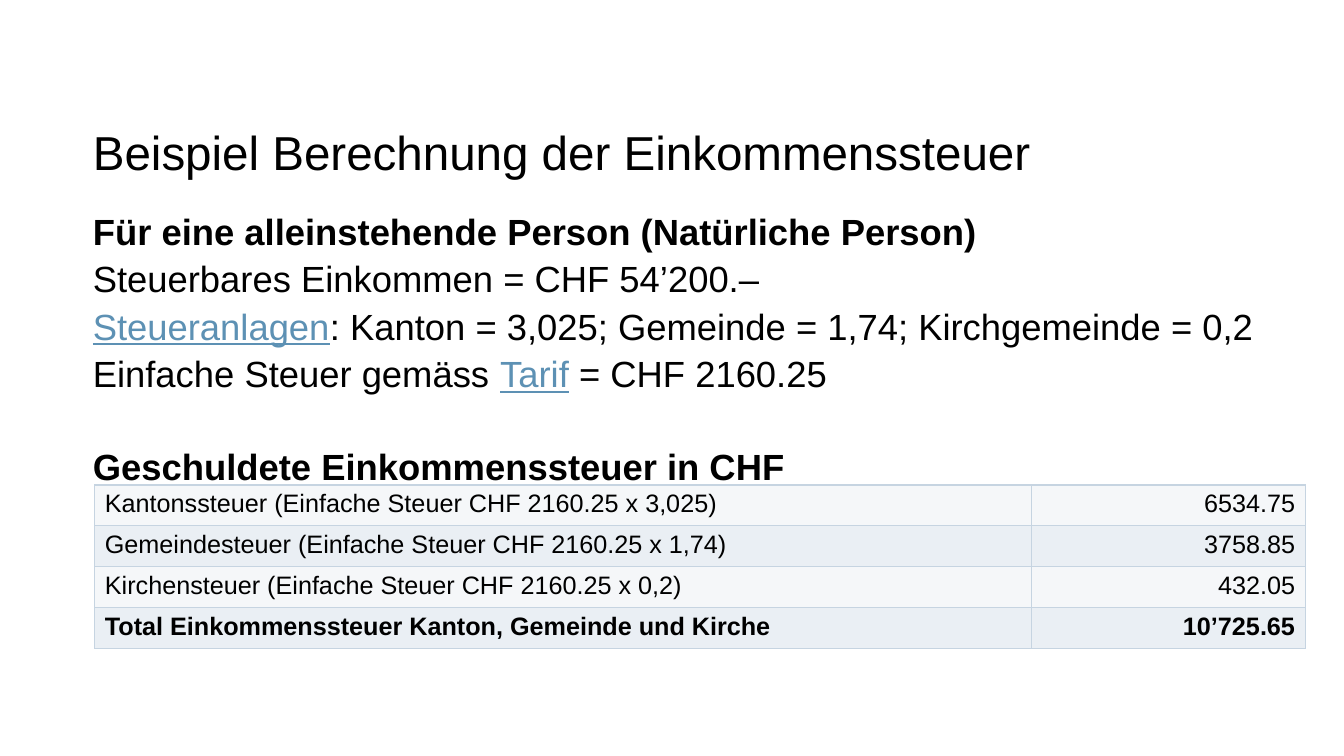
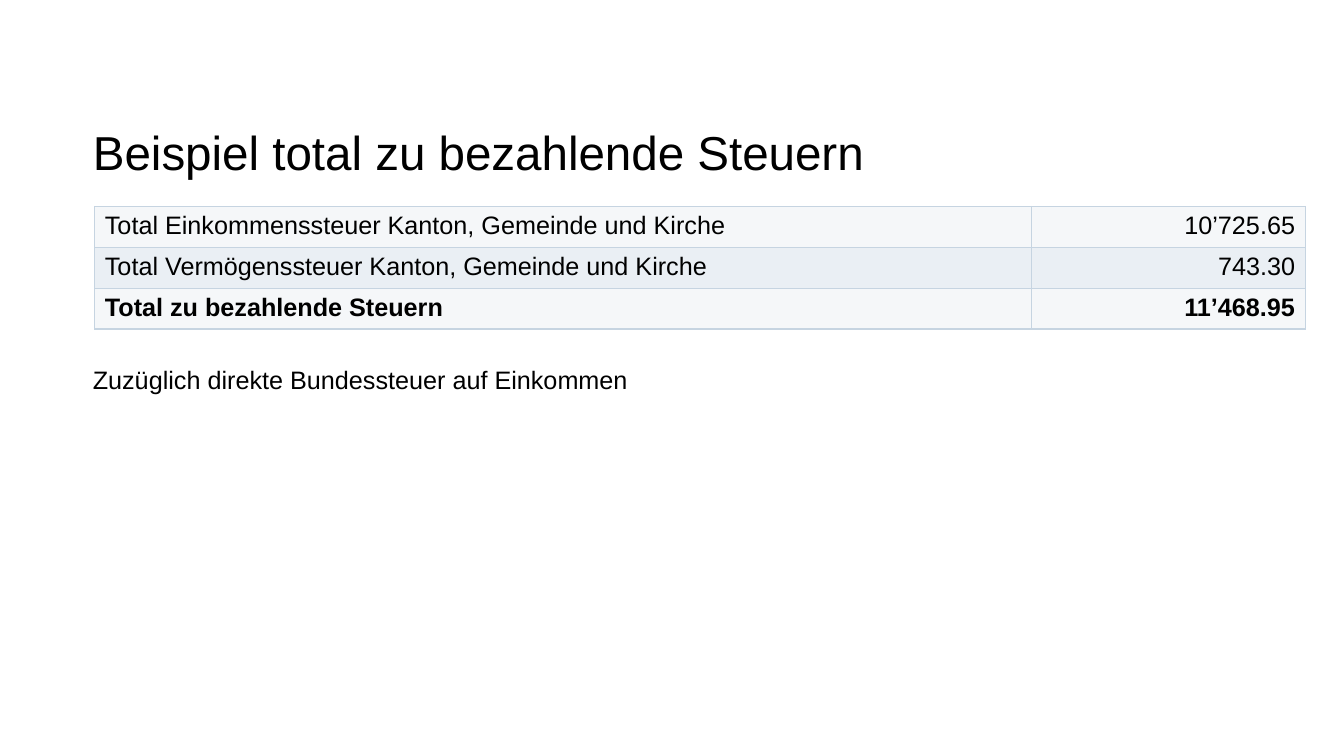
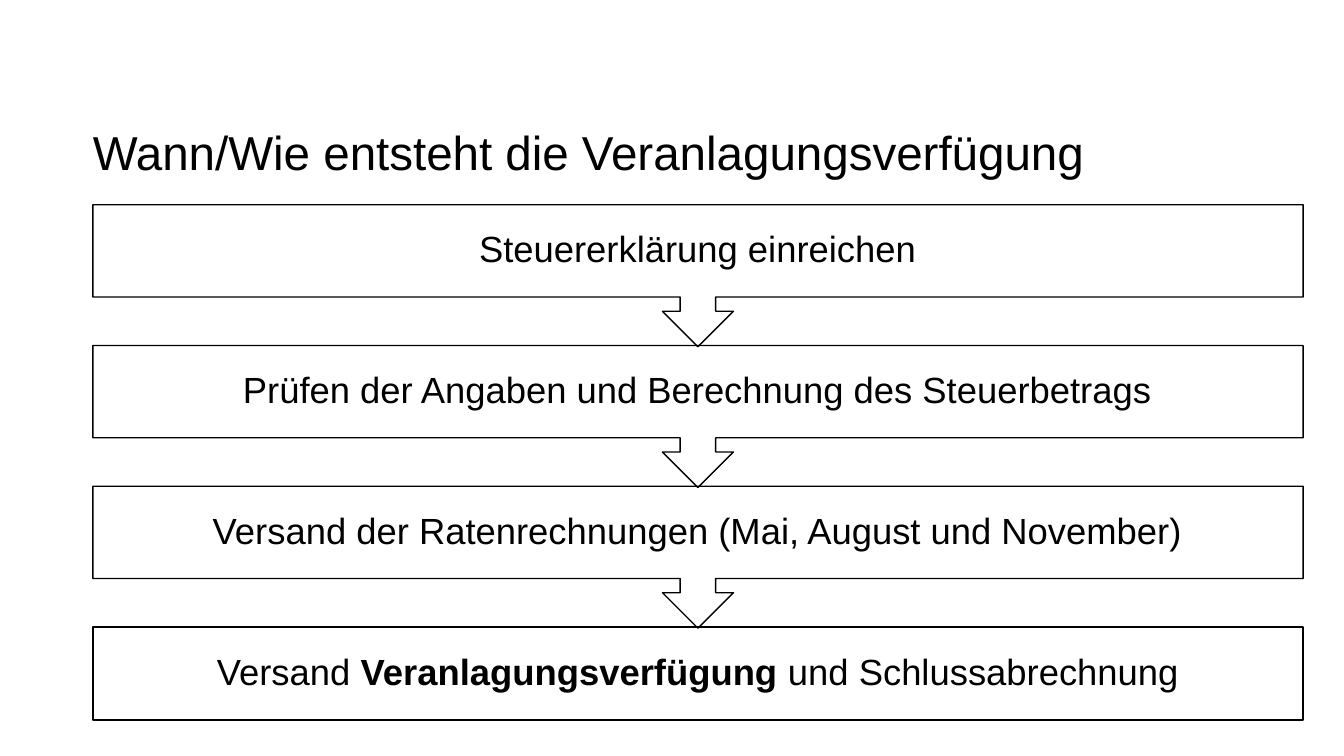
from lxml import etree
from pptx import Presentation
from pptx import util as u
from pptx.dml import color
from pptx.enum import shapes, text
from pptx.oxml import ns

FONT = "Arial"
INK, LINK = "000000", "5D91B4"
BORDER = "C6D4E1"
BANDS = ("F5F7F9", "EAEFF4")
LEFT, WIDTH, TOP = 2.34, 30.5, 5.16
TITLE = (LEFT, 2.97, WIDTH, 1.73)
LEAD = 1.09
ALIGN = {"l": text.PP_ALIGN.LEFT, "c": text.PP_ALIGN.CENTER, "r": text.PP_ALIGN.RIGHT}


def rgb(code):
    return color.RGBColor.from_string(code)


def place(shape, box):
    shape.left, shape.top, shape.width, shape.height = map(u.Cm, box)


def write(para, runs, size=18, align="l", lead=None, bold=False, before=0):
    """Fill a paragraph; a run is a string or a (string, style) pair."""
    para.alignment = ALIGN[align]
    para.line_spacing = lead
    para.space_before, para.space_after = u.Pt(before), u.Pt(0)
    for item in [runs] if isinstance(runs, str) else runs:
        words, style = (item, "") if isinstance(item, str) else item
        run = para.add_run()
        run.text = words
        font = run.font
        font.name, font.size = FONT, u.Pt(size)
        font.bold = bold or style == "bold"
        font.underline = style == "link"
        font.color.rgb = rgb(LINK if style == "link" else INK)


def frame(shape, inset=0, anchor=text.MSO_ANCHOR.TOP):
    body = shape.text_frame
    body.word_wrap = True
    body.auto_size = text.MSO_AUTO_SIZE.NONE
    body.vertical_anchor = anchor
    body.margin_left = body.margin_right = u.Cm(inset)
    body.margin_top = body.margin_bottom = u.Cm(inset)
    return body


def start(deck, layout, title):
    """Add a slide with its title."""
    slide = deck.slides.add_slide(deck.slide_layouts.get_by_name(layout))
    place(slide.shapes.title, TITLE)
    write(frame(slide.shapes.title).paragraphs[0], title, size=34, lead=LEAD)
    return slide


def lines(slide, box, rows):
    """Fill the body placeholder with unbulleted (runs, format) rows."""
    holder = slide.placeholders[1]
    place(holder, box)
    body = frame(holder)
    for i, (runs, style) in enumerate(rows):
        para = body.add_paragraph() if i else body.paragraphs[0]
        write(para, runs, size=26, lead=LEAD, **style)
        props = para._p.get_or_add_pPr()
        props.set("marL", "0")
        props.set("indent", "0")
        etree.SubElement(props, ns.qn("a:buNone"))


def edge(cell):
    """Draw the four borders of a cell."""
    props = cell._tc.get_or_add_tcPr()
    for side in ("lnL", "lnR", "lnT", "lnB"):
        line = etree.SubElement(props, ns.qn("a:" + side), w=str(u.Pt(1)))
        fill = etree.SubElement(line, ns.qn("a:solidFill"))
        etree.SubElement(fill, ns.qn("a:srgbClr"), val=BORDER)


def sums(slide, top, rows, high=1.03):
    """Add a table of labels and amounts whose last row is the total."""
    widths = (23.6, 6.9)
    box = map(u.Cm, (2.39, top, sum(widths), high * len(rows)))
    table = slide.shapes.add_table(len(rows), len(widths), *box).table
    table.first_row = table.horz_banding = False
    for col, width in zip(table.columns, widths):
        col.width = u.Cm(width)
    for r, row in enumerate(rows):
        table.rows[r].height = u.Cm(high)
        for c, words in enumerate(row):
            cell = table.cell(r, c)
            edge(cell)
            cell.fill.solid()
            cell.fill.fore_color.rgb = rgb(BANDS[r % 2])
            write(cell.text_frame.paragraphs[0], words,
                  align="lr"[c], bold=r == len(rows) - 1)


def steps(slide, box, items):
    """Stack boxes joined by arrows, evenly spaced in the given box."""
    left, top, width, height = box
    last = len(items) - 1
    low = 2.34
    pitch = (height - low) / last
    for i, runs in enumerate(items):
        kind, high = ((shapes.MSO_SHAPE.DOWN_ARROW_CALLOUT, pitch + 0.03) if i < last
                      else (shapes.MSO_SHAPE.RECTANGLE, low))
        area = map(u.Cm, (left, top + i * pitch, width, high))
        step = slide.shapes.add_shape(kind, *area)
        step.shadow.inherit = False
        step.fill.background()
        step.line.color.rgb = rgb(INK)
        step.line.width = u.Pt(1)
        body = frame(step, inset=0.5, anchor=text.MSO_ANCHOR.MIDDLE)
        write(body.paragraphs[0], runs, size=26, align="c", lead=0.9)


def income(deck):
    slide = start(deck, "Title and Content", "Beispiel Berechnung der Einkommenssteuer")
    lines(slide, (LEFT, TOP, WIDTH, 12.98), [
        ("Für eine alleinstehende Person (Natürliche Person)", {"bold": True}),
        ("Steuerbares Einkommen = CHF 54’200.–", {}),
        ([("Steueranlagen", "link"),
          ": Kanton = 3,025; Gemeinde = 1,74; Kirchgemeinde = 0,2"], {}),
        (["Einfache Steuer gemäss ", ("Tarif", "link"), " = CHF 2160.25"], {}),
        ("Geschuldete Einkommenssteuer in CHF", {"bold": True, "before": 32.5}),
    ])
    sums(slide, 12.22, [
        ("Kantonssteuer (Einfache Steuer CHF 2160.25 x 3,025)", "6534.75"),
        ("Gemeindesteuer (Einfache Steuer CHF 2160.25 x 1,74)", "3758.85"),
        ("Kirchensteuer (Einfache Steuer CHF 2160.25 x 0,2)", "432.05"),
        ("Total Einkommenssteuer Kanton, Gemeinde und Kirche", "10’725.65"),
    ])


def total(deck):
    slide = start(deck, "Title Only", "Beispiel total zu bezahlende Steuern")
    sums(slide, 5.2, [
        ("Total Einkommenssteuer Kanton, Gemeinde und Kirche", "10’725.65"),
        ("Total Vermögenssteuer Kanton, Gemeinde und Kirche", "743.30"),
        ("Total zu bezahlende Steuern", "11’468.95"),
    ])
    note = slide.shapes.add_textbox(*map(u.Cm, (LEFT, 9.12, WIDTH, 0.76)))
    write(frame(note).paragraphs[0], "Zuzüglich direkte Bundessteuer auf Einkommen",
          lead=LEAD)


def process(deck):
    slide = start(deck, "Title Only", "Wann/Wie entsteht die Veranlagungsverfügung")
    steps(slide, (LEFT, TOP, WIDTH, 12.98), [
        "Steuererklärung einreichen",
        "Prüfen der Angaben und Berechnung des Steuerbetrags",
        "Versand der Ratenrechnungen (Mai, August und November)",
        ["Versand ", ("Veranlagungsverfügung", "bold"), " und Schlussabrechnung"],
    ])


def main():
    deck = Presentation()
    deck.slide_width, deck.slide_height = u.Cm(33.87), u.Cm(19.05)
    for build in (income, total, process):
        build(deck)
    deck.save("out.pptx")


if __name__ == "__main__":
    main()
